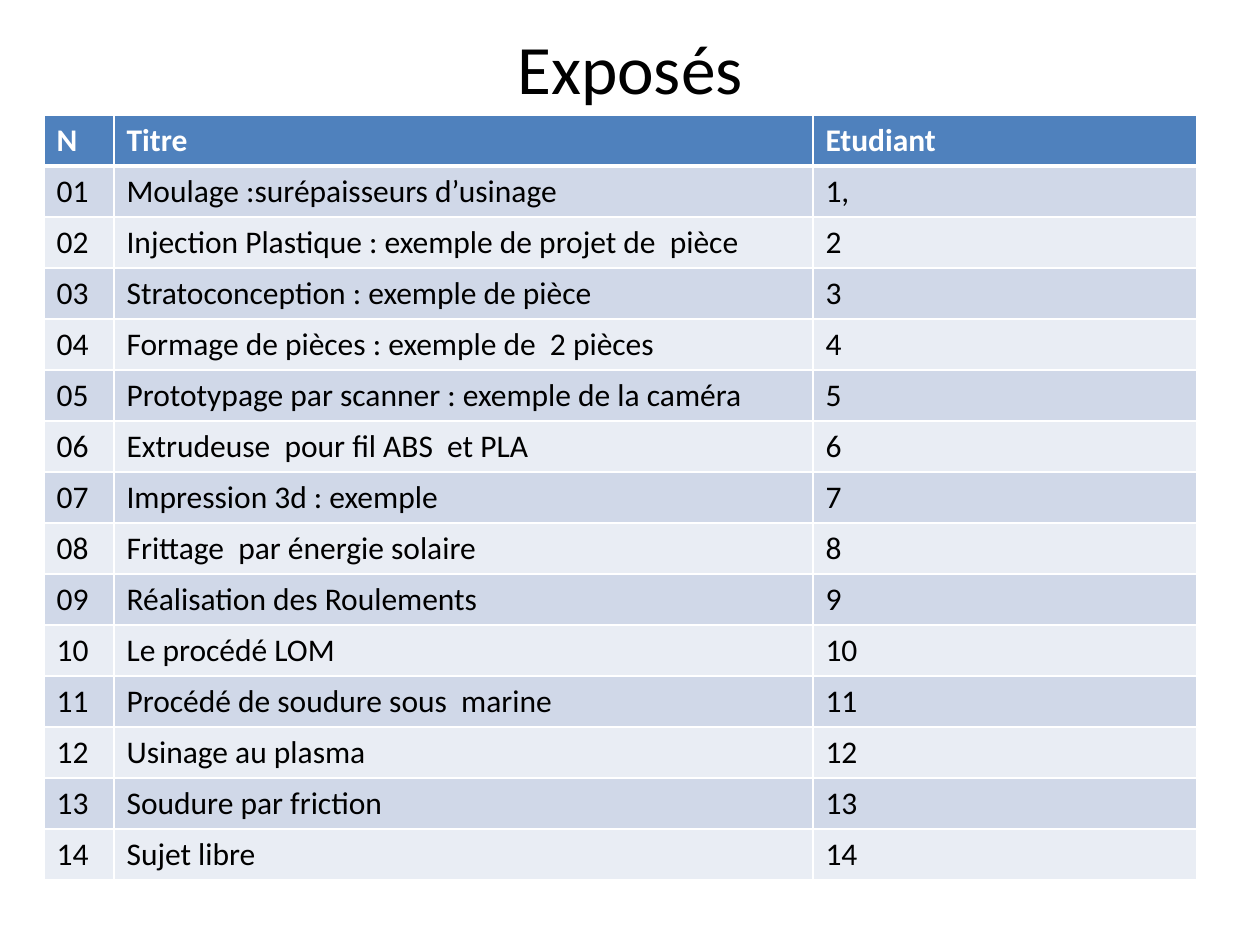
from lxml import etree
from pptx import Presentation
from pptx.dml.color import RGBColor
from pptx.enum.text import MSO_ANCHOR, PP_ALIGN
from pptx.oxml.ns import qn
from pptx.util import Pt

PX = 914400 // 126
MIDDLE = MSO_ANCHOR.MIDDLE
CENTER = PP_ALIGN.CENTER
COLORS = {"text": "000000", "white": "FFFFFF", "header": "4F81BD",
          "odd": "D0D8E8", "even": "E9EDF4"}
TOPICS = [
    "Moulage :surépaisseurs d’usinage",
    "Injection Plastique : exemple de projet de  pièce",
    "Stratoconception : exemple de pièce",
    "Formage de pièces : exemple de  2 pièces",
    "Prototypage par scanner : exemple de la caméra",
    "Extrudeuse  pour fil ABS  et PLA",
    "Impression 3d : exemple",
    "Frittage  par énergie solaire",
    "Réalisation des Roulements",
    "Le procédé LOM",
    "Procédé de soudure sous  marine",
    "Usinage au plasma",
    "Soudure par friction",
    "Sujet libre",
]


class SlideBuilder:
    """Draws styled elements on one slide."""

    def __init__(self, slide, font="Calibri"):
        self.s = slide
        self.font = font

    def set_text(self, p, text, size, color, bold=False):
        p.text = text
        p.font.name = self.font
        p.font.size = Pt(size)
        p.font.bold = bold
        p.font.color.rgb = RGBColor.from_string(COLORS[color])

    def title(self, text, x, y, w, h):
        sp = self.s.shapes.add_textbox(x * PX, y * PX, w * PX, h * PX)
        tf = sp.text_frame
        tf.word_wrap = True
        tf.vertical_anchor = MIDDLE
        p = tf.paragraphs[0]
        p.alignment = CENTER
        self.set_text(p, text, 39.6, "text")

    def border(self, cell, side, width):
        tc_pr = cell._tc.get_or_add_tcPr()
        ln = etree.SubElement(tc_pr, qn(f"a:ln{side}"), w=str(Pt(width)))
        fill = etree.SubElement(ln, qn("a:solidFill"))
        etree.SubElement(fill, qn("a:srgbClr"), val=COLORS["white"])

    def table(self, rows, x, y, widths, row_h):
        frame = self.s.shapes.add_table(
            len(rows), len(widths), x * PX, y * PX,
            sum(widths) * PX, len(rows) * row_h * PX)
        table = frame.table
        for column, width in zip(table.columns, widths):
            column.width = width * PX
        for i, row in enumerate(rows):
            table.rows[i].height = row_h * PX
            header = i == 0
            band = "header" if header else "odd" if i % 2 else "even"
            for j, text in enumerate(row):
                cell = table.cell(i, j)
                for side in "LRTB":
                    heavy = (i, side) in ((0, "B"), (1, "T"))
                    self.border(cell, side, 3 if heavy else 1)
                cell.fill.solid()
                cell.fill.fore_color.rgb = RGBColor.from_string(COLORS[band])
                self.set_text(cell.text_frame.paragraphs[0], text, 18,
                              "white" if header else "text", header)


def main():
    prs = Presentation()
    prs.slide_width, prs.slide_height = 1260 * PX, 945 * PX
    builder = SlideBuilder(prs.slides.add_slide(prs.slide_layouts[6]))
    builder.title("Exposés", 63, 38, 1134, 58)
    rows = [("N", "Titre", "Etudiant")]
    for n, topic in enumerate(TOPICS, 1):
        rows.append((f"{n:02d}", topic, "1," if n == 1 else str(n)))
    builder.table(rows, 44, 115, (70, 699, 384), 51)
    prs.save("out.pptx")


if __name__ == "__main__":
    main()
